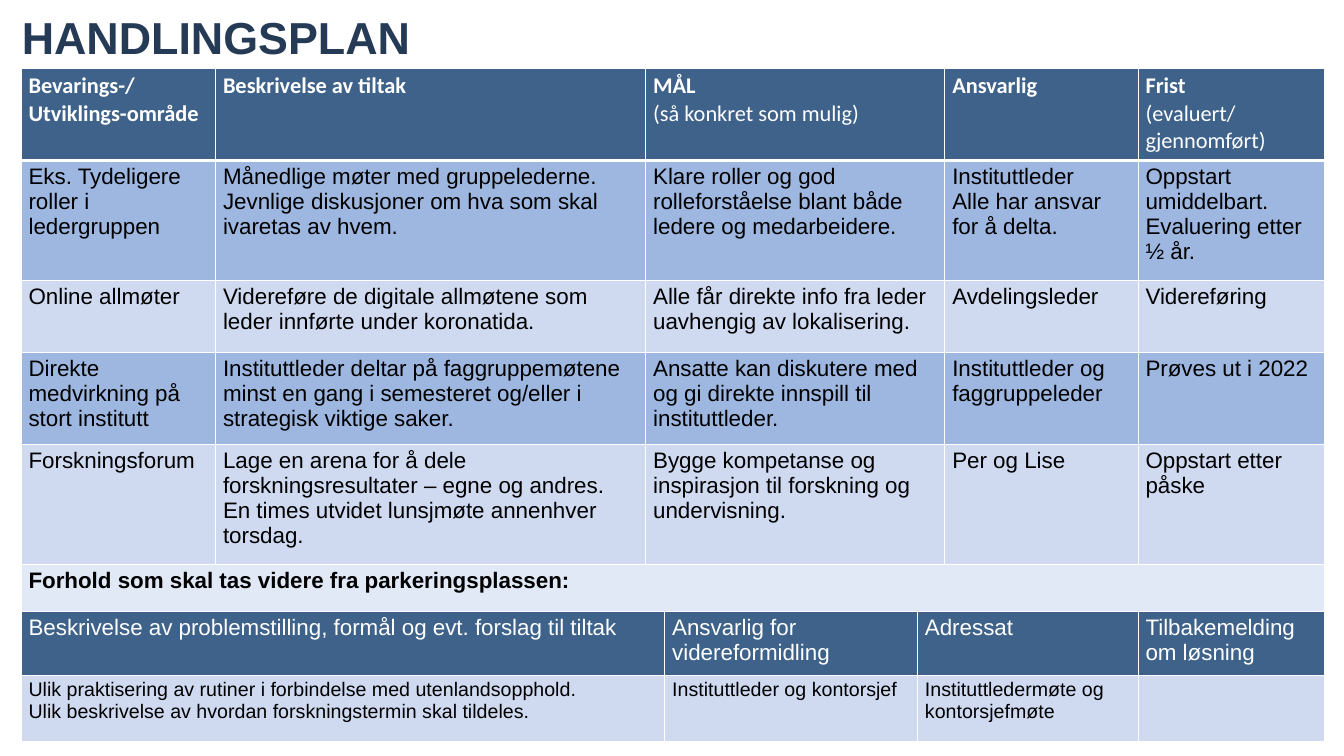
from lxml import etree
from pptx import Presentation
from pptx.dml.color import RGBColor
from pptx.enum.text import MSO_ANCHOR
from pptx.oxml.ns import qn
from pptx.util import Cm, Pt

MIDDLE = MSO_ANCHOR.MIDDLE

COLORS = {
    "title": "253A55",
    "header": "3E628A",
    "dark": "9DB7E1",
    "light": "CFDAF1",
    "pale": "E2E9F6",
    "white": "FFFFFF",
    "black": "000000",
}

TITLE = "HANDLINGSPLAN"

STYLES = {
    "heading": ("Calibri", 16, "white", True),
    "note": ("Calibri", 16, "white", False),
    "body": ("Arial", 16, "black", False),
    "section": ("Arial", 16, "black", True),
    "subheading": ("Arial", 16, "white", False),
    "small": ("Arial", 14, "black", False),
}

HEADING_NOTES = {"(så konkret som mulig)", "(evaluert/", "gjennomført)"}

COLUMN_WIDTHS = [4.9, 10.84, 0.46, 6.37, 0.69, 4.87, 4.7]
PLAN_SPANS = [1, 1, 3, 1, 1]
PARKING_SPANS = [3, 1, 2, 1]

ROWS = [
    (2.31, "header", "heading", PLAN_SPANS, [
        ["Bevarings-/", "Utviklings-område"],
        ["Beskrivelse av tiltak"],
        ["MÅL", "(så konkret som mulig)"],
        ["Ansvarlig"],
        ["Frist", "(evaluert/", "gjennomført)"],
    ]),
    (3.02, "dark", "body", PLAN_SPANS, [
        ["Eks. Tydeligere roller i ledergruppen"],
        ["Månedlige møter med gruppelederne.",
         "Jevnlige diskusjoner om hva som skal ivaretas av hvem."],
        ["Klare roller og god rolleforståelse blant både ledere og medarbeidere."],
        ["Instituttleder", "Alle har ansvar for å delta."],
        ["Oppstart", "umiddelbart.", "Evaluering etter ½ år."],
    ]),
    (1.83, "light", "body", PLAN_SPANS, [
        ["Online allmøter"],
        ["Videreføre de digitale allmøtene som leder innførte under koronatida."],
        ["Alle får direkte info fra leder uavhengig av lokalisering."],
        ["Avdelingsleder"],
        ["Videreføring"],
    ]),
    (2.31, "dark", "body", PLAN_SPANS, [
        ["Direkte medvirkning på stort institutt"],
        ["Instituttleder deltar på faggruppemøtene minst en gang i semesteret "
         "og/eller i strategisk viktige saker."],
        ["Ansatte kan diskutere med og gi direkte innspill til instituttleder."],
        ["Instituttleder og faggruppeleder"],
        ["Prøves ut i 2022"],
    ]),
    (3.02, "light", "body", PLAN_SPANS, [
        ["Forskningsforum"],
        ["Lage en arena for å dele forskningsresultater – egne og andres.",
         "En times utvidet lunsjmøte annenhver torsdag."],
        ["Bygge kompetanse og inspirasjon til forskning og undervisning."],
        ["Per og Lise"],
        ["Oppstart etter påske"],
    ]),
    (1.19, "pale", "section", [7], [
        ["Forhold som skal tas videre fra parkeringsplassen:"],
    ]),
    (1.6, "header", "subheading", PARKING_SPANS, [
        ["Beskrivelse av problemstilling, formål og evt. forslag til tiltak"],
        ["Ansvarlig for videreformidling"],
        ["Adressat"],
        ["Tilbakemelding", "om løsning"],
    ]),
    (1.68, "light", "small", PARKING_SPANS, [
        ["Ulik praktisering av rutiner i forbindelse med utenlandsopphold.",
         "Ulik beskrivelse av hvordan forskningstermin skal tildeles."],
        ["Instituttleder og kontorsjef"],
        ["Instituttledermøte og kontorsjefmøte"],
        [],
    ]),
]


def color(name):
    return RGBColor.from_string(COLORS[name])


def add_span(para, text, font, size, color_name, bold):
    span = para.add_run()
    span.text = text
    span.font.name = font
    span.font.size = Pt(size)
    span.font.bold = bold
    span.font.color.rgb = color(color_name)


def add_border(cell, side, width):
    properties = cell._tc.get_or_add_tcPr()
    line = etree.SubElement(properties, qn(f"a:ln{side}"), w=str(Pt(width)))
    fill = etree.SubElement(line, qn("a:solidFill"))
    etree.SubElement(fill, qn("a:srgbClr"), val=COLORS["white"])


def format_cell(cell, row_index, fill):
    thick_side = {0: "B", 1: "T"}.get(row_index)
    for side in "LRTB":
        add_border(cell, side, 2 if side == thick_side else 0.66)
    cell.fill.solid()
    cell.fill.fore_color.rgb = color(fill)
    cell.margin_left = cell.margin_right = Cm(0.19)
    cell.margin_top = cell.margin_bottom = Cm(0.1)


def write_cell(cell, lines, style):
    frame = cell.text_frame
    for index, text in enumerate(lines):
        para = frame.add_paragraph() if index else frame.paragraphs[0]
        add_span(para, text, *STYLES["note" if text in HEADING_NOTES else style])


def add_title(page):
    box = page.shapes.add_textbox(Cm(0.3), Cm(0.18), Cm(30.48), Cm(1.68))
    frame = box.text_frame
    frame.word_wrap = True
    frame.vertical_anchor = MIDDLE
    para = frame.paragraphs[0]
    para.line_spacing = 0.9
    add_span(para, TITLE, "Arial", 32, "title", True)


def add_plan(page):
    heights = [row[0] for row in ROWS]
    table = page.shapes.add_table(
        len(ROWS), len(COLUMN_WIDTHS), Cm(0.53), Cm(1.73),
        Cm(sum(COLUMN_WIDTHS)), Cm(sum(heights))).table
    for column, width in zip(table.columns, COLUMN_WIDTHS):
        column.width = Cm(width)
    for row_index, (height, fill, style, spans, texts) in enumerate(ROWS):
        table.rows[row_index].height = Cm(height)
        for cell in table.rows[row_index].cells:
            format_cell(cell, row_index, fill)
        start = 0
        for count, lines in zip(spans, texts):
            cell = table.cell(row_index, start)
            if count > 1:
                cell.merge(table.cell(row_index, start + count - 1))
            write_cell(cell, lines, style)
            start += count


def main():
    deck = Presentation()
    deck.slide_width = Cm(33.87)
    deck.slide_height = Cm(19.05)
    page = deck.slides.add_slide(deck.slide_layouts[6])
    add_title(page)
    add_plan(page)
    deck.save("out.pptx")


if __name__ == "__main__":
    main()
